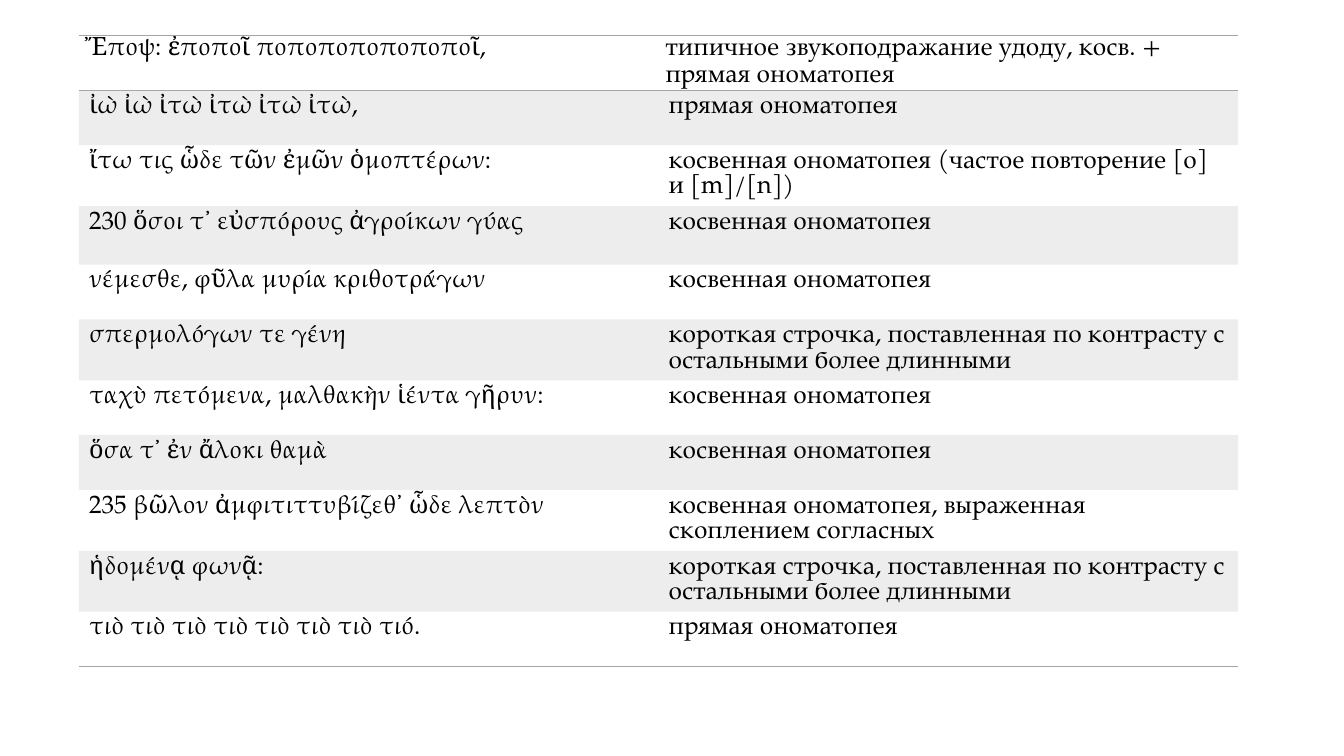
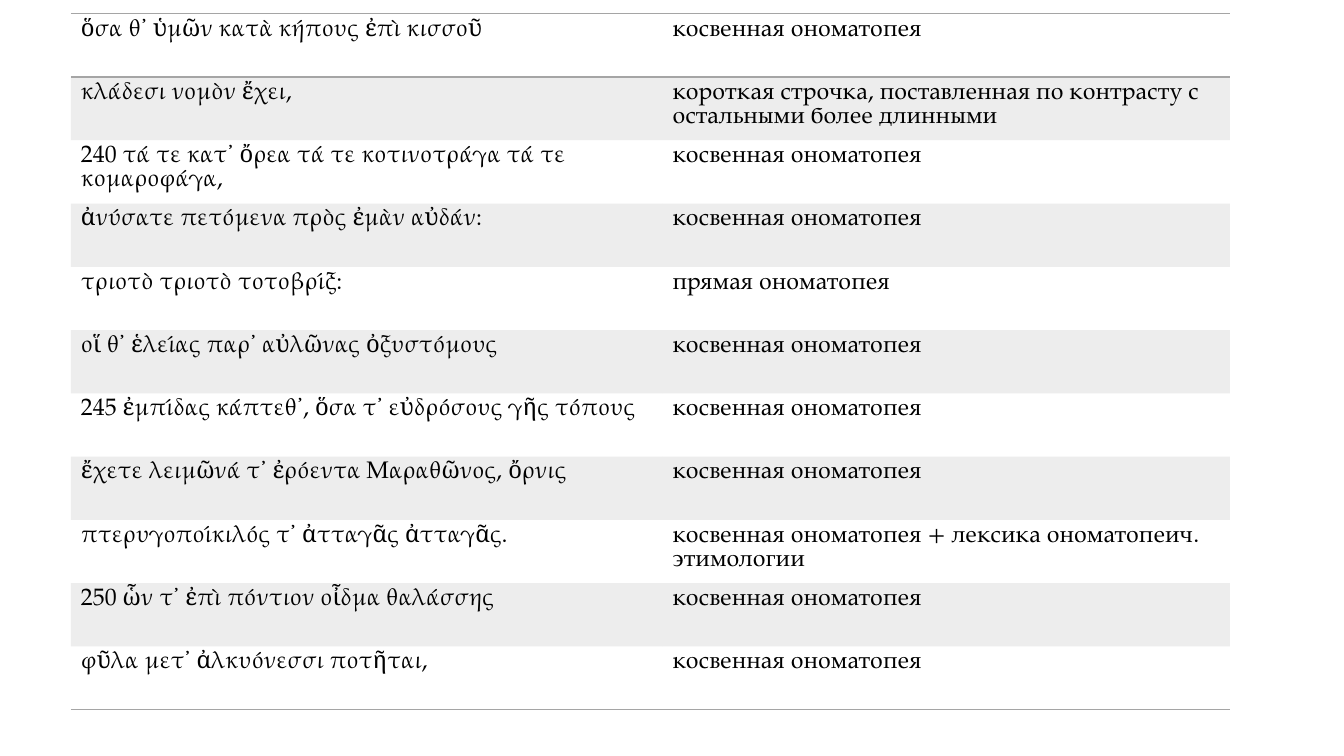
from dataclasses import dataclass
from lxml.etree import SubElement
from pptx import Presentation
from pptx.dml.color import RGBColor
from pptx.enum.text import PP_ALIGN
from pptx.oxml import parse_xml
from pptx.oxml.ns import nsdecls, qn
from pptx.util import Pt


@dataclass(frozen=True)
class Theme:
    font: str = "TeX Gyre Pagella"
    text: str = "000000"
    accent: str = "A5A5A5"
    band_alpha: int = 20000
    rule_width: int = 1
    first_size: int = 18
    second_size: int = 17
    table_style: str = "{2D5ABB26-0587-4C30-8999-92F81FD0307C}"


theme = Theme()

INDIRECT = "косвенная ономатопея"
DIRECT = "прямая ономатопея"
CONTRAST = "короткая строчка, поставленная по контрасту с остальными более длинными"

hoopoe_call = [
    ("Ἔποψ: ἐποποῖ ποποποποποποποῖ,", "типичное звукоподражание удоду, косв. + прямая ономатопея"),
    ("ἰὼ ἰὼ ἰτὼ ἰτὼ ἰτὼ ἰτὼ,", DIRECT),
    ("ἴτω τις ὧδε τῶν ἐμῶν ὁμοπτέρων:", "косвенная ономатопея (частое повторение [о] и [m]/[n])"),
    ("230 ὅσοι τ᾽ εὐσπόρους ἀγροίκων γύας", INDIRECT),
    ("νέμεσθε, φῦλα μυρία κριθοτράγων", INDIRECT),
    ("σπερμολόγων τε γένη", CONTRAST),
    ("ταχὺ πετόμενα, μαλθακὴν ἱέντα γῆρυν:", INDIRECT),
    ("ὅσα τ᾽ ἐν ἄλοκι θαμὰ", INDIRECT),
    ("235 βῶλον ἀμφιτιττυβίζεθ᾽ ὧδε λεπτὸν", "косвенная ономатопея, выраженная скоплением согласных"),
    ("ἡδομένᾳ φωνᾷ:", CONTRAST),
    ("τιὸ τιὸ τιὸ τιὸ τιὸ τιὸ τιὸ τιό.", DIRECT),
]
birds_summoned = [
    ("ὅσα θ᾽ ὑμῶν κατὰ κήπους ἐπὶ κισσοῦ", INDIRECT),
    ("κλάδεσι νομὸν ἔχει,", CONTRAST),
    ("240 τά τε κατ᾽ ὄρεα τά τε κοτινοτράγα τά τε κομαροφάγα,", INDIRECT),
    ("ἀνύσατε πετόμενα πρὸς ἐμὰν αὐδάν:", INDIRECT),
    ("τριοτὸ τριοτὸ τοτοβρίξ:", DIRECT),
    ("οἵ θ᾽ ἑλείας παρ᾽ αὐλῶνας ὀξυστόμους", INDIRECT),
    ("245 ἐμπίδας κάπτεθ᾽, ὅσα τ᾽ εὐδρόσους γῆς τόπους", INDIRECT),
    ("ἔχετε λειμῶνά τ᾽ ἐρόεντα Μαραθῶνος, ὄρνις", INDIRECT),
    ("πτερυγοποίκιλός τ᾽ ἀτταγᾶς ἀτταγᾶς.", "косвенная ономатопея + лексика ономатопеич. этимологии"),
    ("250 ὧν τ᾽ ἐπὶ πόντιον οἶδμα θαλάσσης", INDIRECT),
    ("φῦλα μετ᾽ ἀλκυόνεσσι ποτῆται,", INDIRECT),
]


def style_cell(cell, banded, edges):
    properties = cell._tc.get_or_add_tcPr()
    if banded:
        cell.fill.solid()
        cell.fill.fore_color.rgb = RGBColor.from_string(theme.accent)
        colour = properties.find(".//" + qn("a:srgbClr"))
        SubElement(colour, qn("a:alpha"), val=str(theme.band_alpha))
    else:
        cell.fill.background()
    for position, edge in enumerate(edges):
        properties.insert(position, parse_xml(
            f'<a:{edge} {nsdecls("a")} w="{Pt(theme.rule_width)}"><a:solidFill>'
            f'<a:srgbClr val="{theme.accent}"/></a:solidFill></a:{edge}>'))


def add_verses(slide, verses, left, top, columns, row_heights, size):
    frame = slide.shapes.add_table(len(verses), 2, Pt(left), Pt(top),
                                   Pt(sum(columns)), Pt(sum(row_heights)))
    table = frame.table
    table.first_row = table.horz_banding = False
    table._tbl.tblPr.find(qn("a:tableStyleId")).text = theme.table_style
    for column, width in zip(table.columns, columns):
        column.width = Pt(width)
    for index, (row, height, verse) in enumerate(zip(table.rows, row_heights, verses)):
        row.height = Pt(height)
        edges = {0: ("lnT", "lnB"), len(verses) - 1: ("lnB",)}.get(index, ())
        for cell, words in zip(row.cells, verse):
            style_cell(cell, index % 2 == 1, edges)
            run = cell.text_frame.paragraphs[0].add_run()
            run.text = words
            run.font.name = theme.font
            run.font.size = Pt(size)
            run.font.color.rgb = RGBColor.from_string(theme.text)
    return table


deck = Presentation()
deck.slide_width, deck.slide_height = Pt(960), Pt(540)
blank = deck.slide_layouts[6]

first_heights = [39.2] * 11
first_heights[3] = 41.8
opening = add_verses(deck.slides.add_slide(blank), hoopoe_call, 56.4, 25.4,
                     (414, 414), first_heights, theme.first_size)
for cell in opening.rows[0].cells:
    cell.margin_left = cell.margin_right = Pt(5)
    cell.margin_top = cell.margin_bottom = Pt(0)
    cell.text_frame.paragraphs[0].line_spacing = 1.07
opening.cell(0, 0).text_frame.paragraphs[0].alignment = PP_ALIGN.JUSTIFY

add_verses(deck.slides.add_slide(blank), birds_summoned, 50.6, 9.8,
           (422.6, 405.4), [45.2] * 11, theme.second_size)

deck.save("out.pptx")
